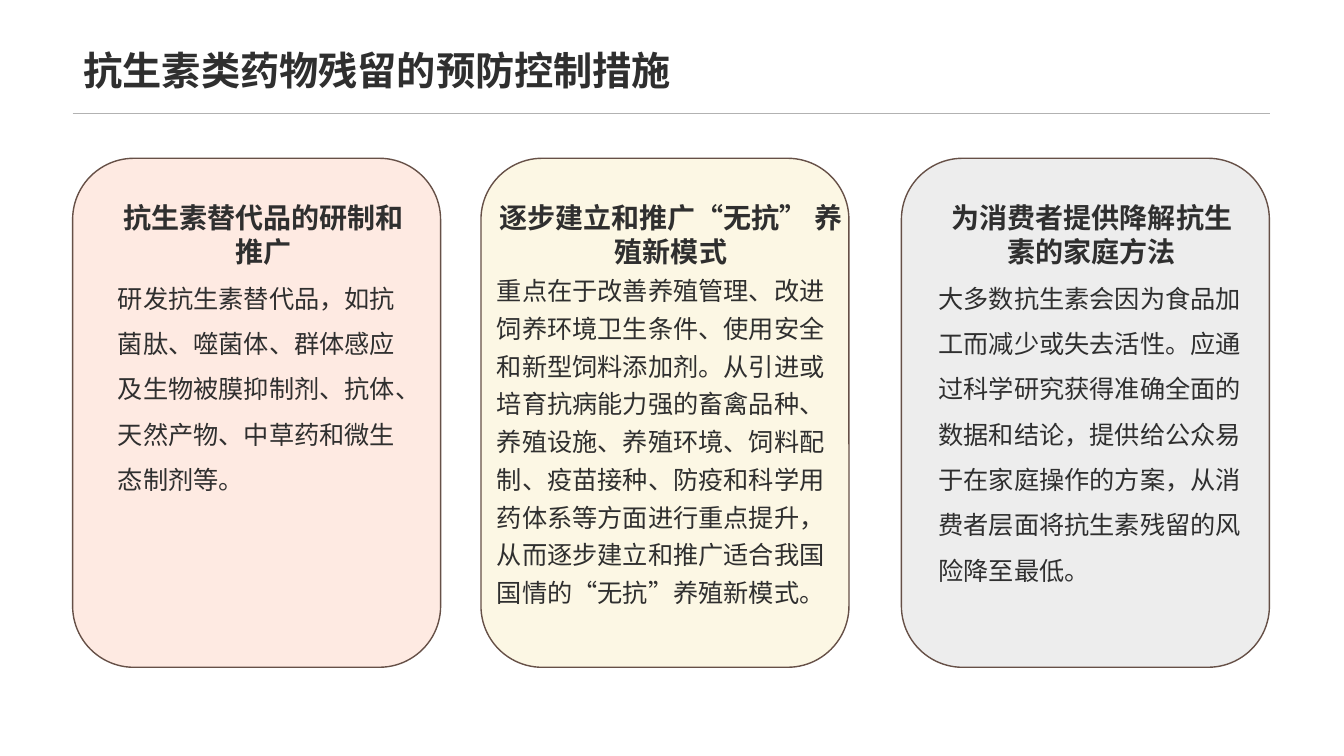
from dataclasses import dataclass

from lxml.etree import SubElement
from pptx import Presentation
from pptx.dml.color import RGBColor
from pptx.enum.lang import MSO_LANGUAGE_ID
from pptx.enum.shapes import MSO_CONNECTOR, MSO_SHAPE
from pptx.enum.text import MSO_ANCHOR, MSO_AUTO_SIZE, PP_ALIGN
from pptx.oxml.ns import qn
from pptx.slide import Slide
from pptx.util import Inches, Pt

INK = "2F2F2F"
OUTLINE = "665047"
RULE = "B2B2B2"
CJK_FONT = "Noto Sans CJK SC"
CARD_TOP, CARD_WIDTH, CARD_HEIGHT = 1.57, 3.65, 5.05
TEXT_TOP = 1.94


@dataclass
class Card:
    left: float
    fill: str
    text_left: float
    text_width: float
    text_height: float
    line_spacing: float
    heading: str
    body: str


CARDS = [
    Card(0.72, "FEEAE2", 1.07, 3.09, 2.98, 1.5,
         "抗生素替代品的研制和推广",
         "研发抗生素替代品，如抗菌肽、噬菌体、群体感应及生物被膜抑制剂、抗体、"
         "天然产物、中草药和微生态制剂等。"),
    Card(4.77, "FCF7E4", 4.83, 3.65, 4.13, 1.25,
         "逐步建立和推广“无抗” 养殖新模式",
         "重点在于改善养殖管理、改进饲养环境卫生条件、使用安全和新型饲料添加剂。"
         "从引进或培育抗病能力强的畜禽品种、养殖设施、养殖环境、饲料配制、疫苗接种、"
         "防疫和科学用药体系等方面进行重点提升，从而逐步建立和推广适合我国国情的"
         "“无抗”养殖新模式。"),
    Card(8.94, "EDEDED", 9.21, 3.24, 3.88, 1.5,
         "为消费者提供降解抗生素的家庭方法",
         "大多数抗生素会因为食品加工而减少或失去活性。应通过科学研究获得准确全面的"
         "数据和结论，提供给公众易于在家庭操作的方案，从消费者层面将抗生素残留的风险"
         "降至最低。"),
]


def color(value: str) -> RGBColor:
    return RGBColor.from_string(value)


def add_span(para, text: str, size: float, bold: bool, font: str = CJK_FONT) -> None:
    span = para.add_run()
    span.text = text
    span.font.size = Pt(size)
    span.font.bold = bold
    span.font.color.rgb = color(INK)
    span.font.name = font
    span.font.language_id = MSO_LANGUAGE_ID.SIMPLIFIED_CHINESE
    east_asian = SubElement(span.font._element, qn("a:ea"))
    east_asian.set("typeface", CJK_FONT)


def add_title(page: Slide, text: str) -> None:
    title = page.shapes.title
    title.left, title.top = Inches(0.73), Inches(0)
    title.width, title.height = Inches(11.88), Inches(0.98)
    frame = title.text_frame
    frame.auto_size = MSO_AUTO_SIZE.NONE
    frame.word_wrap = True
    frame.vertical_anchor = MSO_ANCHOR.BOTTOM
    para = frame.paragraphs[0]
    para.alignment = PP_ALIGN.LEFT
    add_span(para, text, 28, True, "Arial")


def add_rule(page: Slide) -> None:
    rule = page.shapes.add_connector(
        MSO_CONNECTOR.STRAIGHT, Inches(0.72), Inches(1.12), Inches(12.6), Inches(1.12))
    rule.line.color.rgb = color(RULE)
    rule.line.width = Pt(0.5)
    SubElement(rule._element.spPr, qn("a:effectLst"))


def add_card(page: Slide, card: Card) -> None:
    panel = page.shapes.add_shape(
        MSO_SHAPE.ROUNDED_RECTANGLE, Inches(card.left), Inches(CARD_TOP),
        Inches(CARD_WIDTH), Inches(CARD_HEIGHT))
    panel.shadow.inherit = False
    panel.fill.solid()
    panel.fill.fore_color.rgb = color(card.fill)
    panel.line.color.rgb = color(OUTLINE)
    panel.line.width = Pt(1)

    box = page.shapes.add_textbox(
        Inches(card.text_left), Inches(TEXT_TOP),
        Inches(card.text_width), Inches(card.text_height))
    frame = box.text_frame
    frame.word_wrap = True
    frame.auto_size = MSO_AUTO_SIZE.SHAPE_TO_FIT_TEXT
    heading = frame.paragraphs[0]
    heading.alignment = PP_ALIGN.CENTER
    add_span(heading, card.heading, 20, True)
    body = frame.add_paragraph()
    body.line_spacing = card.line_spacing
    add_span(body, card.body, 18, False)


def main() -> None:
    deck = Presentation()
    deck.slide_width, deck.slide_height = Inches(13.33), Inches(7.5)
    page = deck.slides.add_slide(deck.slide_layouts[5])

    # Title and the rule below it
    add_title(page, "抗生素类药物残留的预防控制措施")
    add_rule(page)

    # Three measures
    for card in CARDS:
        add_card(page, card)

    deck.save("out.pptx")


if __name__ == "__main__":
    main()
